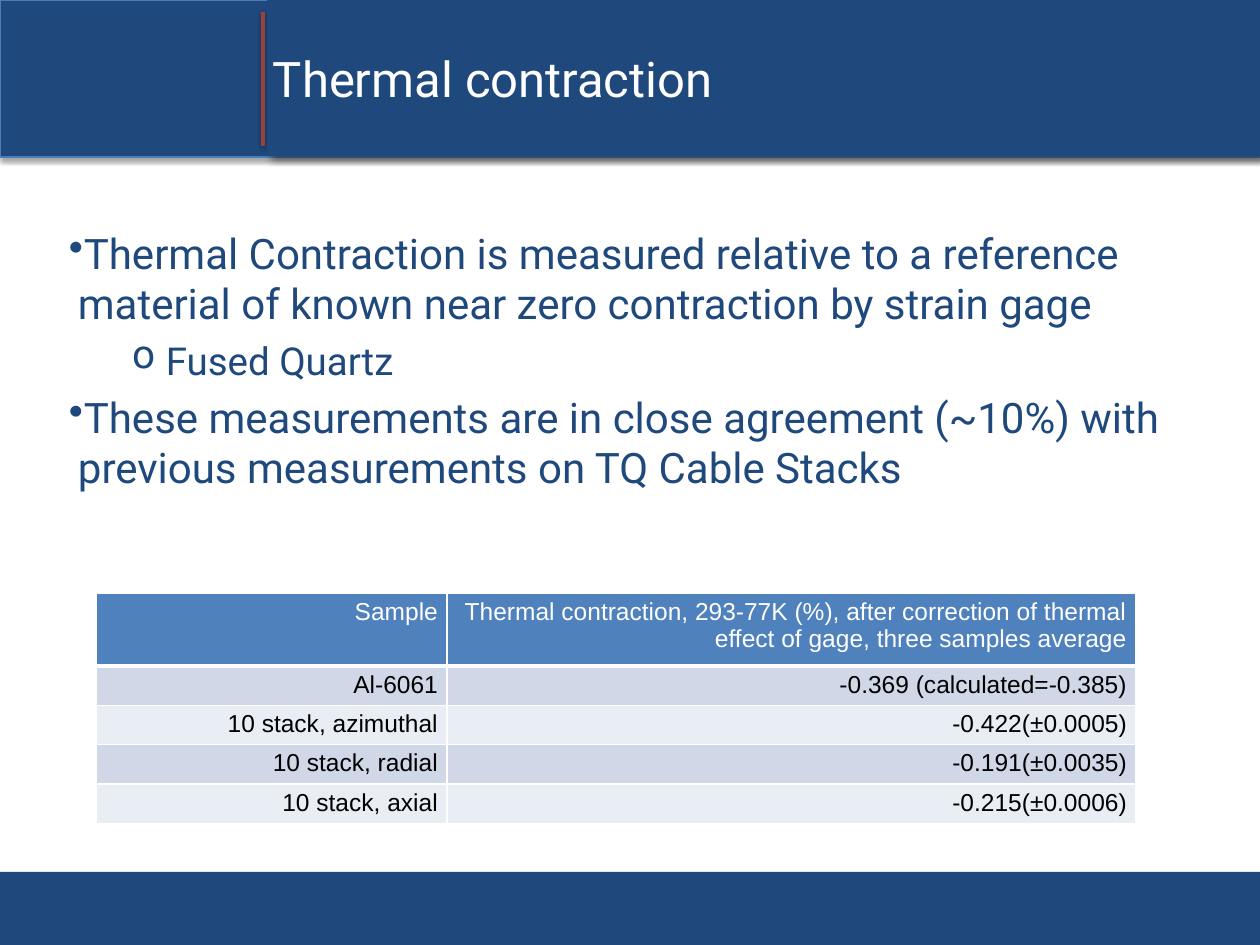
from lxml.etree import SubElement
from pptx import Presentation
from pptx.dml.color import RGBColor
from pptx.enum.shapes import MSO_CONNECTOR, MSO_SHAPE
from pptx.enum.text import MSO_ANCHOR, PP_ALIGN
from pptx.oxml.ns import qn
from pptx.util import Emu, Pt

EMU_PER_PX = 914400 / 126
COLORS = {
    "navy": "1F497D", "edge": "4A7EBB", "red": "9A403E", "white": "FFFFFF",
    "black": "000000", "header": "4F81BD", "band_dark": "D0D8E8", "band_light": "E9EDF4",
}


def px(length):
    return Emu(round(length * EMU_PER_PX))


def rgb(name):
    return RGBColor.from_string(COLORS[name])


class SlideBuilder:
    heading_font = "Roboto"
    table_font = "Arial"

    def __init__(self, slide):
        self.slide = slide

    def solid(self, parent, color, alpha=None):
        fill = SubElement(parent, qn("a:solidFill")) if alpha is None else parent
        clr = SubElement(fill, qn("a:srgbClr"), val=COLORS[color])
        if alpha is not None:
            SubElement(clr, qn("a:alpha"), val=str(alpha * 1000))

    def shadow(self, shape, alpha, blur, distance, angle):
        effects = SubElement(shape._element.spPr, qn("a:effectLst"))
        outer = SubElement(effects, qn("a:outerShdw"), blurRad=str(Pt(blur)),
                           dist=str(Pt(distance)), dir=str(angle * 60000),
                           algn="ctr", rotWithShape="0")
        self.solid(outer, "black", alpha)

    def style_runs(self, paragraph, font, size, color):
        for run in paragraph.runs:
            run.font.name = font
            run.font.size = Pt(size)
            run.font.bold = False
            run.font.color.rgb = rgb(color)

    def set_insets(self, frame, inset):
        frame.margin_left = frame.margin_right = px(inset)
        frame.margin_top = frame.margin_bottom = px(inset)
        frame.word_wrap = True

    def band(self, left, top, width, height, edge=None, shadow=None):
        band = self.slide.shapes.add_shape(
            MSO_SHAPE.RECTANGLE, px(left), px(top), px(width), px(height))
        band.fill.solid()
        band.fill.fore_color.rgb = rgb("navy")
        if edge:
            band.line.color.rgb = rgb(edge)
            band.line.width = Pt(0.75)
        else:
            band.line.fill.background()
        if shadow:
            self.shadow(band, *shadow)
        else:
            band.shadow.inherit = False
        return band

    def title(self, text, left, top, width, height, shadow):
        frame = self.band(left, top, width, height, shadow=shadow).text_frame
        frame.text = text
        self.set_insets(frame, 6)
        frame.vertical_anchor = MSO_ANCHOR.MIDDLE
        frame.paragraphs[0].alignment = PP_ALIGN.LEFT
        self.style_runs(frame.paragraphs[0], self.heading_font, 28, "white")

    def divider(self, x, start, end, shadow):
        divider = self.slide.shapes.add_connector(
            MSO_CONNECTOR.STRAIGHT, px(x), px(start), px(x), px(end))
        divider.line.color.rgb = rgb("red")
        divider.line.width = Pt(2)
        self.shadow(divider, *shadow)

    def bullets(self, items, left, top, width, height):
        # Per level: bullet, left margin px, hanging px, size
        levels = [("•", 9, 9, 24), ("o", 97, 34, 22)]
        frame = self.slide.shapes.add_textbox(
            px(left), px(top), px(width), px(height)).text_frame
        self.set_insets(frame, 6)
        for index, (level, text) in enumerate(items):
            paragraph = frame.add_paragraph() if index else frame.paragraphs[0]
            paragraph.text = text
            paragraph.level = level
            mark, margin, hanging, size = levels[level]
            properties = paragraph._p.get_or_add_pPr()
            properties.set("marL", str(px(margin)))
            properties.set("indent", str(-px(hanging)))
            SubElement(properties, qn("a:buChar"), char=mark)
            if index:
                paragraph.space_before = Pt(5)
            self.style_runs(paragraph, self.heading_font, size, "navy")

    def cell(self, cell, text, fill, color, bottom_border):
        cell.text = text
        cell.margin_left = cell.margin_right = px(9)
        cell.margin_top = cell.margin_bottom = px(5)
        paragraph = cell.text_frame.paragraphs[0]
        paragraph.alignment = PP_ALIGN.RIGHT
        self.style_runs(paragraph, self.table_font, 14, color)
        properties = cell._tc.get_or_add_tcPr()
        for side, width in (("L", 1), ("R", 1), ("T", 1), ("B", bottom_border)):
            border = SubElement(properties, qn(f"a:ln{side}"), w=str(Pt(width)))
            self.solid(border, "white")
        cell.fill.solid()
        cell.fill.fore_color.rgb = rgb(fill)

    def table(self, rows, left, top, widths, heights):
        table = self.slide.shapes.add_table(
            len(rows), len(widths), px(left), px(top),
            px(sum(widths)), px(sum(heights))).table
        table.first_row = table.horz_banding = False
        for column, width in zip(table.columns, widths):
            column.width = px(width)
        for r, values in enumerate(rows):
            table.rows[r].height = px(heights[r])
            fill = "header" if r == 0 else ("band_light", "band_dark")[r % 2]
            color, border = ("black", 1) if r else ("white", 3)
            for c, text in enumerate(values):
                self.cell(table.cell(r, c), text, fill, color, border)


def main():
    presentation = Presentation()
    presentation.slide_width, presentation.slide_height = px(1260), px(945)
    builder = SlideBuilder(presentation.slides.add_slide(presentation.slide_layouts[6]))

    # Footer and header; shadows are alpha, blur, distance, angle
    builder.band(0, 872, 1262, 75)
    builder.band(0, 0, 1260, 157, edge="edge", shadow=(35, 3, 1.8, 90))
    builder.divider(263, 146, 12, shadow=(38, 3, 1.6, 90))
    builder.title("Thermal contraction", 267, -1, 993, 157, shadow=(43, 4, 3, 45))

    # Findings
    builder.bullets([
        (0, "Thermal Contraction is measured relative to a reference material "
            "of known near zero contraction by strain gage"),
        (1, "Fused Quartz"),
        (0, "These measurements are in close agreement (~10%) with previous "
            "measurements on TQ Cable Stacks"),
    ], 63, 221, 1134, 624)

    # Measured contraction
    builder.table([
        ("Sample", "Thermal contraction, 293-77K (%), after correction of thermal "
                   "effect of gage, three samples average"),
        ("Al-6061", "-0.369 (calculated=-0.385)"),
        ("10 stack, azimuthal", "-0.422(±0.0005)"),
        ("10 stack, radial", "-0.191(±0.0035)"),
        ("10 stack, axial", "-0.215(±0.0006)"),
    ], 96, 593, widths=[351, 689], heights=[73] + [37] * 4)

    presentation.save("out.pptx")


if __name__ == "__main__":
    main()
